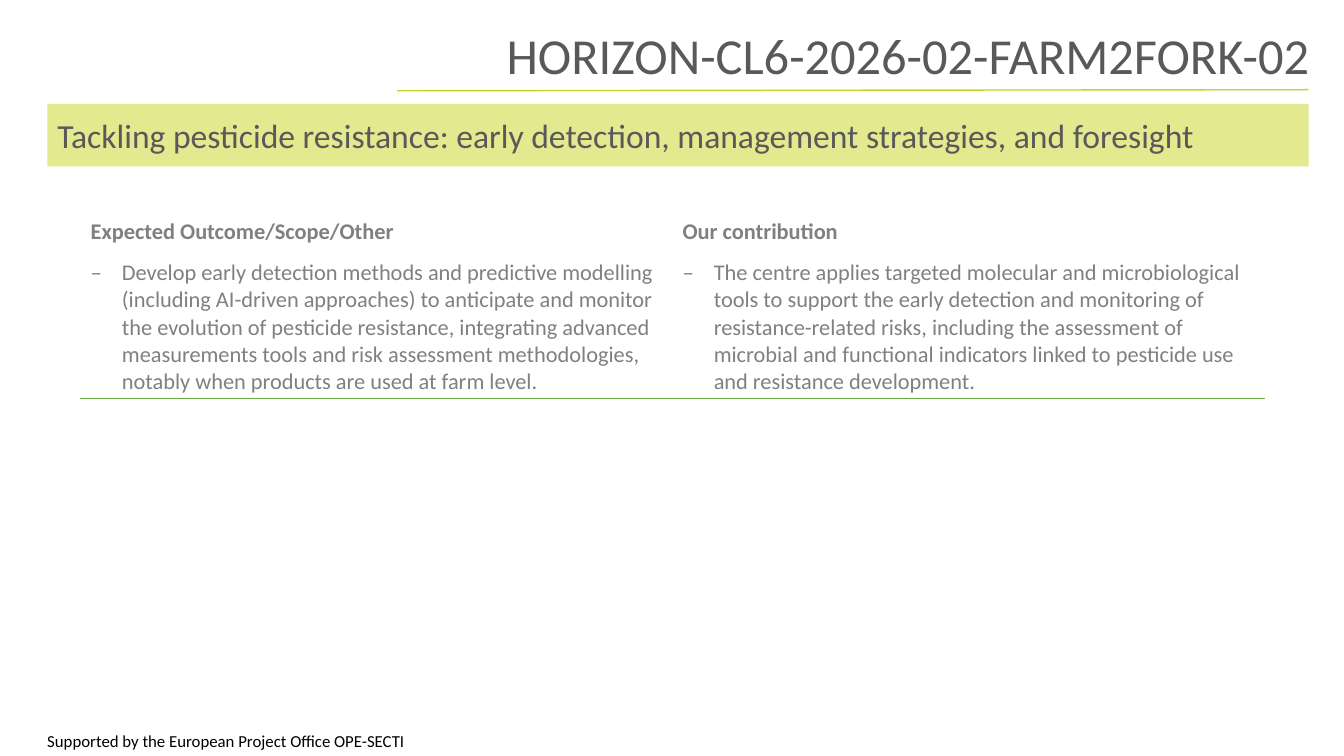
import pptx
import pptx.util
import pptx.dml.color
import pptx.enum.shapes
import pptx.enum.text
import pptx.oxml
import pptx.oxml.ns
from pptx.util import Inches

RGBColor = pptx.dml.color.RGBColor
PP_ALIGN = pptx.enum.text.PP_ALIGN
ANCHOR = pptx.enum.text.MSO_ANCHOR

LIME = RGBColor(0xC7, 0xD4, 0x1E)
GREEN = RGBColor(0x70, 0xAD, 0x47)
DARK_GREY = RGBColor(0x59, 0x59, 0x59)
MID_GREY = RGBColor(0x80, 0x80, 0x80)
BLACK = RGBColor(0, 0, 0)
WHITE = RGBColor(0xFF, 0xFF, 0xFF)
FONT = "Calibri"

COLUMNS = [
    ("Expected Outcome/Scope/Other",
     "Develop early detection methods and predictive modelling (including AI-driven approaches) "
     "to anticipate and monitor the evolution of pesticide resistance, integrating advanced "
     "measurements tools and risk assessment methodologies, notably when products are used at "
     "farm level."),
    ("Our contribution",
     "The centre applies targeted molecular and microbiological tools to support the early "
     "detection and monitoring of resistance-related risks, including the assessment of "
     "microbial and functional indicators linked to pesticide use and resistance development."),
]


def xml(markup):
    """Parse one element whose tag is in the DrawingML namespace."""
    head, mark, rest = markup.partition(">")
    closing = "/" if head.endswith("/") else ""
    head = head.rstrip("/")
    return pptx.oxml.parse_xml(f'{head} {pptx.oxml.ns.nsdecls("a")}{closing}{mark}{rest}')


def write(frame, text, size, color, bold=False, align=PP_ALIGN.LEFT, spacing=None, bullet=None):
    frame.word_wrap = True
    para = frame.paragraphs[0]
    para.alignment = align
    if spacing:
        para.line_spacing = spacing
    if bullet:
        properties = para._p.get_or_add_pPr()
        properties.set("marL", str(Inches(0.31)))
        properties.set("indent", str(-Inches(0.31)))
        properties.append(xml(f'<a:buFont typeface="{FONT}"/>'))
        properties.append(xml(f'<a:buChar char="{bullet}"/>'))
    span = para.add_run()
    span.text = text
    span.font.name = FONT
    span.font.size = pptx.util.Pt(size)
    span.font.bold = bold
    span.font.color.rgb = color


def fill_translucent(fill, color, opacity):
    fill.solid()
    fill.fore_color.rgb = color
    color_element = fill._xPr.find(".//" + pptx.oxml.ns.qn("a:srgbClr"))
    color_element.append(xml(f'<a:alpha val="{opacity * 1000}"/>'))


def add_text(page, left, top, width, height, text, anchor=ANCHOR.TOP, **text_format):
    box = page.shapes.add_textbox(Inches(left), Inches(top), Inches(width), Inches(height))
    box.text_frame.vertical_anchor = anchor
    write(box.text_frame, text, **text_format)


def add_title_rule(page):
    rule = page.shapes.add_connector(pptx.enum.shapes.MSO_CONNECTOR.STRAIGHT,
                                     Inches(3.94), Inches(0.9), Inches(12.98), Inches(0.89))
    rule.line.color.rgb = LIME
    rule.line.width = pptx.util.Pt(1)
    rule._element.spPr.append(xml("<a:effectLst/>"))


def add_topic_band(page, text):
    band = page.shapes.add_shape(pptx.enum.shapes.MSO_SHAPE.RECTANGLE,
                                 Inches(0.47), Inches(1.03), Inches(12.51), Inches(0.62))
    band.shadow.inherit = False
    fill_translucent(band.fill, LIME, 50)
    band.line.fill.background()
    band.text_frame.vertical_anchor = ANCHOR.MIDDLE
    write(band.text_frame, text, size=24, color=DARK_GREY)


def add_bottom_border(cell, color):
    border = xml(f'<a:lnB w="{pptx.util.Pt(1)}"><a:solidFill><a:srgbClr val="{color}"/>'
                 '</a:solidFill></a:lnB>')
    cell._tc.get_or_add_tcPr().insert(0, border)


def add_contribution_table(page):
    frame = page.shapes.add_table(2, len(COLUMNS), Inches(0.8), Inches(2.11),
                                  Inches(11.74), Inches(1.84))
    table = frame.table
    table.first_row = table.horz_banding = False
    table.rows[0].height = Inches(0.41)
    table.rows[1].height = Inches(1.43)
    for index, (heading, detail) in enumerate(COLUMNS):
        table.columns[index].width = Inches(5.87)
        heading_cell, detail_cell = table.cell(0, index), table.cell(1, index)
        heading_cell.fill.background()
        write(heading_cell.text_frame, heading, size=16, color=MID_GREY, bold=True)
        fill_translucent(detail_cell.fill, WHITE, 20)
        add_bottom_border(detail_cell, GREEN)
        write(detail_cell.text_frame, detail, size=16, color=MID_GREY, bullet="‒")


def main():
    deck = pptx.Presentation()
    deck.slide_width, deck.slide_height = Inches(13.33), Inches(7.5)
    page = deck.slides.add_slide(deck.slide_layouts[6])
    add_text(page, 0.37, 7.18, 3.88, 0.32, "Supported by the European Project Office OPE-SECTI",
             size=12, color=BLACK, spacing=1.1)
    add_title_rule(page)
    add_text(page, 3.84, 0.18, 9.25, 0.72, "HORIZON-CL6-2026-02-FARM2FORK-02",
             anchor=ANCHOR.BOTTOM, size=36, color=DARK_GREY, align=PP_ALIGN.RIGHT, spacing=0.9)
    add_topic_band(page, "Tackling pesticide resistance: early detection, management strategies, "
                         "and foresight")
    add_contribution_table(page)
    deck.save("out.pptx")


if __name__ == "__main__":
    main()
